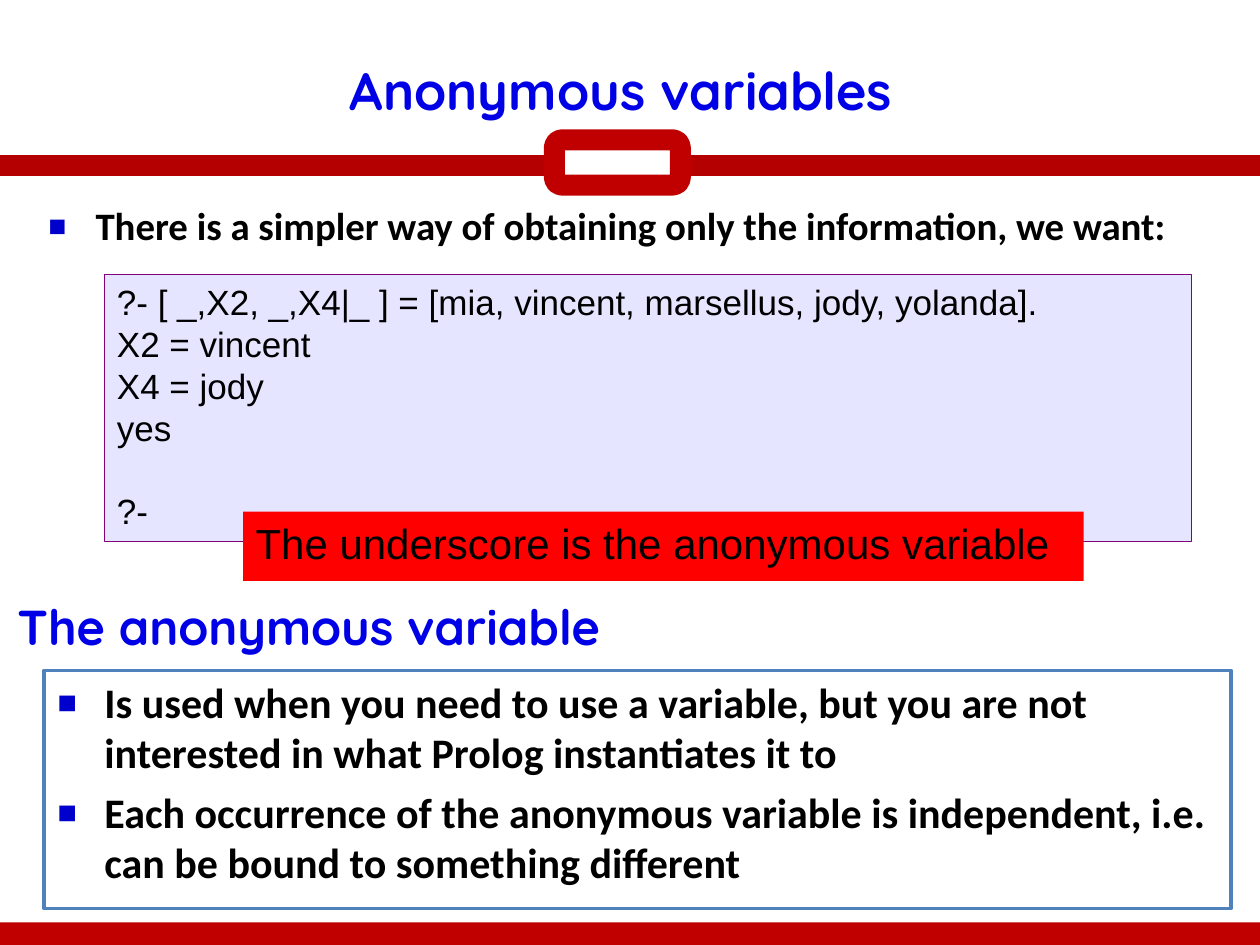
import pptx
import pptx.dml.color
import pptx.enum.shapes
import pptx.enum.text
import pptx.oxml
import pptx.oxml.ns
import pptx.util
from lxml import etree

Inches, Pt = pptx.util.Inches, pptx.util.Pt
RGBColor = pptx.dml.color.RGBColor
Shape = pptx.enum.shapes.MSO_SHAPE
Align = pptx.enum.text.PP_ALIGN
Anchor = pptx.enum.text.MSO_ANCHOR
qn = pptx.oxml.ns.qn

BLACK = RGBColor(0x00, 0x00, 0x00)
WHITE = RGBColor(0xFF, 0xFF, 0xFF)
HEADING_BLUE = RGBColor(0x00, 0x00, 0xE6)
BULLET_BLUE = RGBColor(0x00, 0x00, 0xCC)
BOX_BLUE = RGBColor(0x4F, 0x81, 0xBD)
CODE_LILAC = RGBColor(0xCC, 0xCC, 0xFF)
CODE_PURPLE = RGBColor(0x80, 0x00, 0x80)
RULE_RED = RGBColor(0xB4, 0x00, 0x00)
BAND_RED = RGBColor(0xC0, 0x00, 0x00)
NOTE_RED = RGBColor(0xFF, 0x00, 0x00)


def add_bullet(paragraph):
    properties = paragraph._p.get_or_add_pPr()
    color = etree.SubElement(properties, qn("a:buClr"))
    etree.SubElement(color, qn("a:srgbClr"), val=str(BULLET_BLUE))
    etree.SubElement(properties, qn("a:buSzPct"), val="150000")
    etree.SubElement(properties, qn("a:buFont"), typeface="Arial")
    etree.SubElement(properties, qn("a:buChar"), char="▪")


def write(shape, *lines, size, font="Arial", color=BLACK, bold=False, align=Align.LEFT,
          anchor=Anchor.TOP, hanging=0, bullet=False, gap=0):
    """Write one paragraph per line of text."""
    frame = shape.text_frame
    frame.word_wrap = True
    frame.auto_size = pptx.enum.text.MSO_AUTO_SIZE.NONE
    frame.vertical_anchor = anchor
    for index, line in enumerate(lines):
        paragraph = frame.add_paragraph() if index else frame.paragraphs[0]
        paragraph.text = line
        paragraph.alignment = align
        if hanging:
            properties = paragraph._p.get_or_add_pPr()
            properties.set("marL", str(Inches(hanging)))
            properties.set("indent", str(-Inches(hanging)))
        if bullet:
            add_bullet(paragraph)
        paragraph.space_before = Pt(gap if index else 0)
        run_font = paragraph.runs[0].font
        run_font.name, run_font.size, run_font.bold = font, Pt(size), bold
        run_font.color.rgb = color
    return frame


class Deck:
    HEADING = dict(font="Quicksand", color=HEADING_BLUE, bold=True, anchor=Anchor.MIDDLE)
    BULLETS = dict(font="Calibri", bold=True, hanging=0.38, bullet=True, gap=5)
    PLAIN = dict(hanging=0.38)

    def __init__(self):
        self.presentation = pptx.Presentation()
        self.presentation.slide_width = Inches(10)
        self.presentation.slide_height = Inches(7.5)
        self.slide = self.presentation.slides.add_slide(self.presentation.slide_layouts[5])

    def title(self, text, left, top, width, height, **style):
        title = self.slide.shapes.title
        title.left, title.top = Inches(left), Inches(top)
        title.width, title.height = Inches(width), Inches(height)
        write(title, text, **style)

    def text(self, left, top, width, height, *lines, **style):
        box = self.slide.shapes.add_textbox(*map(Inches, (left, top, width, height)))
        return write(box, *lines, **style)

    def shape(self, left, top, width, height, fill, line=None, weight=0,
              kind=Shape.RECTANGLE, opacity=100):
        shape = self.slide.shapes.add_shape(kind, *map(Inches, (left, top, width, height)))
        shape.shadow.inherit = False
        shape.fill.solid()
        shape.fill.fore_color.rgb = fill
        if opacity < 100:
            fill_color = shape._element.spPr.find(qn("a:solidFill"))[0]
            etree.SubElement(fill_color, qn("a:alpha"), val=str(opacity * 1000))
        if line is None:
            shape.line.fill.background()
        else:
            shape.line.color.rgb = line
            shape.line.width = Pt(weight)
        return shape

    def rule(self, x1, y1, x2, y2, color, weight):
        rule = self.slide.shapes.add_connector(
            pptx.enum.shapes.MSO_CONNECTOR.STRAIGHT, *map(Inches, (x1, y1, x2, y2)))
        rule.line.color.rgb = color
        rule.line.width = Pt(weight)
        etree.SubElement(rule._element.spPr, qn("a:effectLst"))


def main():
    deck = Deck()

    # Red frame of the page
    deck.rule(0, 1.31, 10, 1.31, RULE_RED, 12)
    deck.shape(-0.01, 7.32, 10.04, 0.21, BAND_RED)
    deck.shape(4.4, 1.11, 1, 0.36, WHITE, BAND_RED, 12, kind=Shape.ROUNDED_RECTANGLE)

    # Title and lead
    deck.title("Anonymous variables", 0.43, 0.29, 9, 0.84,
               size=30, align=Align.CENTER, **deck.HEADING)
    deck.text(0.28, 1.55, 9.72, 0.55,
              "There is a simpler way of obtaining only the information, we want:",
              size=22.2, **deck.BULLETS)

    # Prolog query, with the next prompt one line lower
    query = deck.shape(0.83, 2.18, 8.63, 2.12, CODE_LILAC, CODE_PURPLE, 0.75, opacity=50)
    code = write(query,
                 "?- [ _,X2, _,X4|_ ] = [mia, vincent, marsellus, jody, yolanda].",
                 "X2 = vincent", "X4 = jody", "yes", "?-", size=20, **deck.PLAIN)
    code.paragraphs[-1].space_before = Pt(23)

    # Note on the underscore
    note = deck.shape(1.93, 4.06, 6.67, 0.55, NOTE_RED)
    write(note, "The underscore is the anonymous variable", size=24, **deck.PLAIN)

    # Explanation
    explanation = deck.shape(0.35, 5.32, 9.42, 1.89, WHITE, BOX_BLUE, 2)
    write(explanation,
          "Is used when you need to use a variable, but you are not interested in what "
          "Prolog instantiates it to",
          "Each occurrence of the anonymous variable is independent, i.e. can be bound to "
          "something different",
          size=24, **deck.BULLETS)
    deck.text(0.04, 4.69, 4.96, 0.55, "The anonymous variable", size=28, **deck.HEADING)

    deck.presentation.save("out.pptx")


if __name__ == "__main__":
    main()
